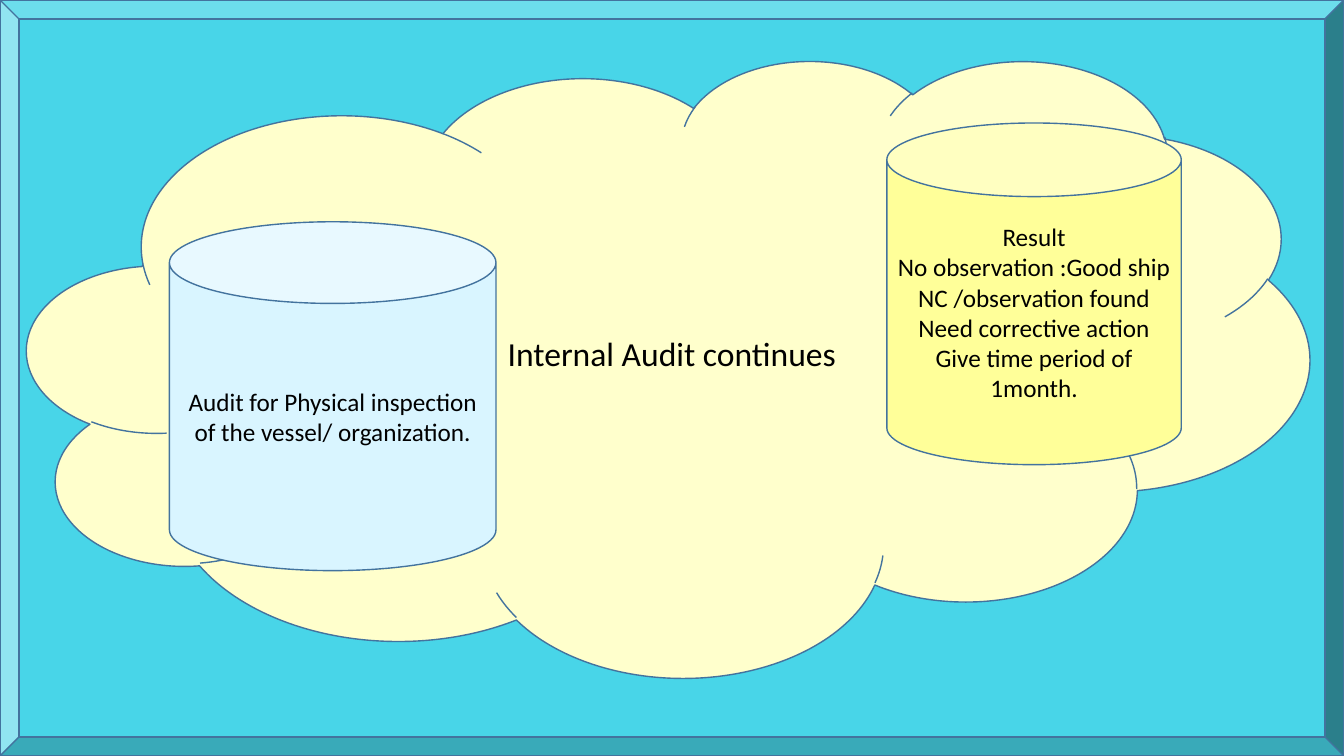
import pptx
import pptx.util
import pptx.dml.color
import pptx.enum.shapes
import pptx.enum.text

Cm = pptx.util.Cm
Pt = pptx.util.Pt
Kind = pptx.enum.shapes.MSO_SHAPE
Anchor = pptx.enum.text.MSO_ANCHOR

WIDE, HIGH = 33.87, 19.05
FONT = "Calibri"
HUES = {
    "frame": "48D5E8",
    "cloud": "FFFFCC",
    "audit": "D9F5FF",
    "result": "FFFF99",
    "edge": "43739E",
    "text": "000000",
}
TITLE = ("Internal Audit continues", (12.5, 8.26, 8.86, 1.27))
PARTS = [
    ("frame", Kind.BEVEL, (0, 0, WIDE, HIGH), 0.025, []),
    ("cloud", Kind.CLOUD, (0.69, 1.5, 32.31, 15.54), None, []),
    ("audit", Kind.CAN, (4.27, 5.59, 8.23, 8.79), 0.25, [
        "Audit for Physical inspection of the vessel/ organization.",
    ]),
    ("result", Kind.CAN, (22.35, 3.1, 7.42, 8.61), 0.25, [
        "Result",
        "No observation :Good ship",
        "NC /observation found",
        "Need corrective action",
        "Give time period of 1month.",
    ]),
]


def hue(name):
    return pptx.dml.color.RGBColor.from_string(HUES[name])


def write(frame, lines, size):
    frame.vertical_anchor = Anchor.MIDDLE
    for i, line in enumerate(lines):
        para = frame.add_paragraph() if i else frame.paragraphs[0]
        para.alignment = pptx.enum.text.PP_ALIGN.CENTER
        run = para.add_run()
        run.text = line
        run.font.name = FONT
        run.font.size = Pt(size)
        run.font.color.rgb = hue("text")


def draw(slide, name, kind, box, bend, lines):
    shape = slide.shapes.add_shape(kind, *map(Cm, box))
    shape.shadow.inherit = False
    shape.fill.solid()
    shape.fill.fore_color.rgb = hue(name)
    shape.line.color.rgb = hue("edge")
    shape.line.width = Pt(1)
    if bend is not None:
        shape.adjustments[0] = bend
    if lines:
        shape.text_frame.word_wrap = True
        write(shape.text_frame, lines, 18)


def main():
    deck = pptx.Presentation()
    deck.slide_width, deck.slide_height = Cm(WIDE), Cm(HIGH)
    slide = deck.slides.add_slide(deck.slide_layouts[5])
    for part in PARTS:
        draw(slide, *part)

    words, box = TITLE
    title = slide.shapes.title
    title.left, title.top, title.width, title.height = map(Cm, box)
    title.text_frame.word_wrap = False
    title.text_frame.auto_size = pptx.enum.text.MSO_AUTO_SIZE.NONE
    write(title.text_frame, [words], 24)
    slide.shapes._spTree.append(title._element)

    deck.save("out.pptx")


if __name__ == "__main__":
    main()
